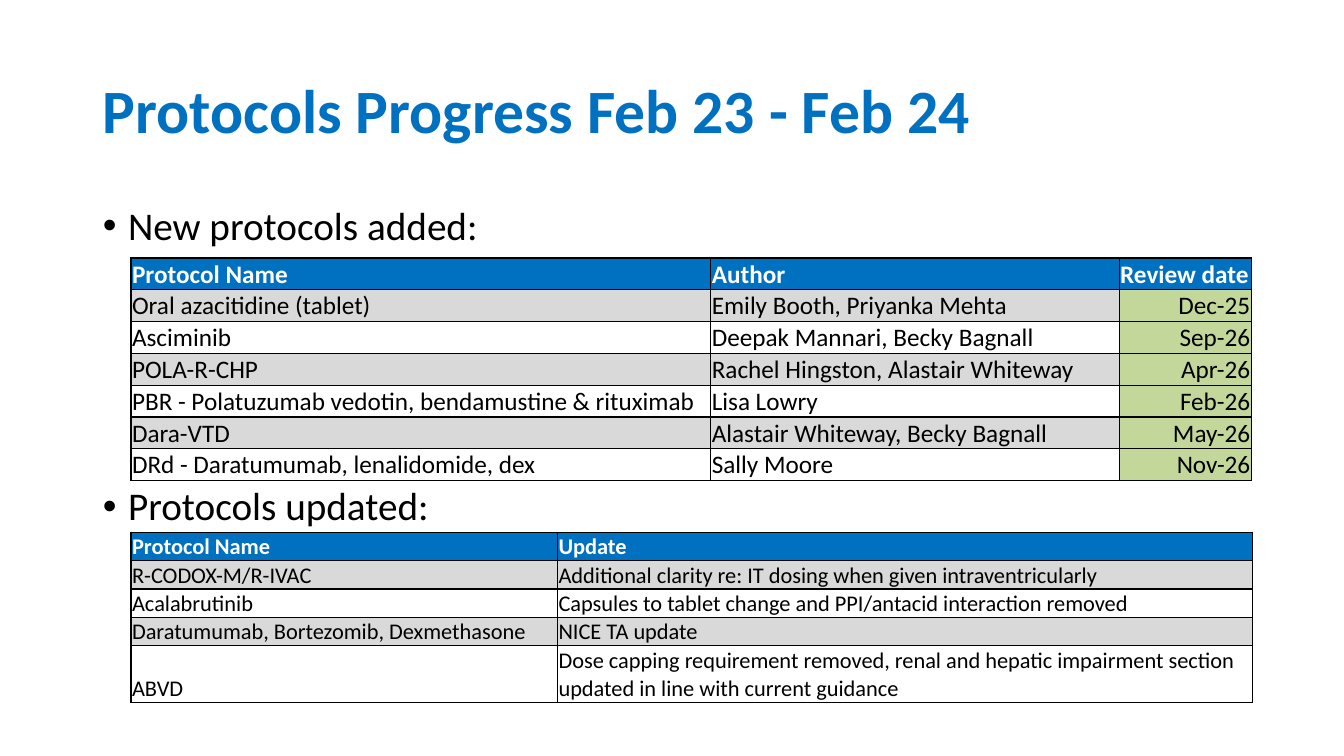
import pptx
import pptx.util
import pptx.dml.color
import pptx.enum.text
import pptx.oxml
import pptx.oxml.ns
from lxml import etree

Inches = pptx.util.Inches
Pt = pptx.util.Pt
RGBColor = pptx.dml.color.RGBColor
ALIGN = pptx.enum.text.PP_ALIGN
ANCHOR = pptx.enum.text.MSO_ANCHOR
qn = pptx.oxml.ns.qn

BLUE = RGBColor(0x00, 0x70, 0xC0)
GREY = RGBColor(0xD9, 0xD9, 0xD9)
GREEN = RGBColor(0xC4, 0xD7, 0x9B)
WHITE = RGBColor(0xFF, 0xFF, 0xFF)
BLACK = RGBColor(0x00, 0x00, 0x00)

ADDED = [
    ("Protocol Name", "Author", "Review date"),
    ("Oral azacitidine (tablet)", "Emily Booth, Priyanka Mehta", "Dec-25"),
    ("Asciminib", "Deepak Mannari, Becky Bagnall", "Sep-26"),
    ("POLA-R-CHP", "Rachel Hingston, Alastair Whiteway", "Apr-26"),
    ("PBR - Polatuzumab vedotin, bendamustine & rituximab", "Lisa Lowry", "Feb-26"),
    ("Dara-VTD", "Alastair Whiteway, Becky Bagnall", "May-26"),
    ("DRd - Daratumumab, lenalidomide, dex", "Sally Moore", "Nov-26"),
]
UPDATED = [
    ("Protocol Name", "Update"),
    ("R-CODOX-M/R-IVAC",
     "Additional clarity re: IT dosing when given intraventricularly"),
    ("Acalabrutinib",
     "Capsules to tablet change and PPI/antacid interaction removed"),
    ("Daratumumab, Bortezomib, Dexmethasone", "NICE TA update"),
    ("ABVD", "Dose capping requirement removed, renal and hepatic impairment "
             "section updated in line with current guidance"),
]


class Deck:
    font = "Calibri"

    def __init__(self, wide, high):
        self.file = pptx.Presentation()
        self.file.slide_width = Inches(wide)
        self.file.slide_height = Inches(high)
        self.slide = self.file.slides.add_slide(self.file.slide_layouts[1])

    def style(self, para, size, color, bold=False):
        for run in para.runs:
            run.font.name = self.font
            run.font.size = Pt(size)
            run.font.bold = bold
            run.font.color.rgb = color

    def place(self, shape, left, top, wide, high):
        shape.left, shape.top = Inches(left), Inches(top)
        shape.width, shape.height = Inches(wide), Inches(high)
        shape.text_frame.auto_size = pptx.enum.text.MSO_AUTO_SIZE.NONE

    def title(self, text, *box):
        shape = self.slide.shapes.title
        self.place(shape, *box)
        shape.text_frame.text = text
        shape.text_frame.vertical_anchor = ANCHOR.MIDDLE
        para = shape.text_frame.paragraphs[0]
        para.alignment = ALIGN.LEFT
        para.line_spacing = 0.9
        self.style(para, 44, BLUE, True)

    def bullets(self, items, *box):
        shape = self.slide.placeholders[1]
        self.place(shape, *box)
        frame = shape.text_frame
        frame.text = "\n".join(text for text, gap in items)
        for para, (text, gap) in zip(frame.paragraphs, items):
            para.line_spacing = 0.9
            para.space_before = Pt(gap)
            self.style(para, 28, BLACK)
            props = para._p.get_or_add_pPr()
            props.set("marL", str(Inches(0.25)))
            props.set("indent", str(-Inches(0.25)))
            etree.SubElement(props, qn("a:buFont"), typeface="Arial")
            etree.SubElement(props, qn("a:buChar"), char="•")

    def border(self, cell):
        props = cell._tc.get_or_add_tcPr()
        for spot, side in enumerate(("lnL", "lnR", "lnT", "lnB")):
            line = etree.Element(qn("a:" + side), w=str(Pt(1)))
            fill = etree.SubElement(line, qn("a:solidFill"))
            etree.SubElement(fill, qn("a:srgbClr"), val=str(BLACK))
            props.insert(spot, line)

    def cell(self, cell, text, size, fill, head, right):
        cell.text_frame.text = text
        cell.vertical_anchor = ANCHOR.BOTTOM
        cell.margin_left = cell.margin_right = cell.margin_top = Inches(0.01)
        cell.margin_bottom = 0
        para = cell.text_frame.paragraphs[0]
        para.alignment = ALIGN.RIGHT if right else ALIGN.LEFT
        self.style(para, size, WHITE if head else BLACK, head)
        cell.fill.solid()
        cell.fill.fore_color.rgb = fill
        self.border(cell)

    def table(self, data, left, top, cols, rows, size, date=None):
        frame = self.slide.shapes.add_table(
            len(data), len(cols), Inches(left), Inches(top),
            Inches(sum(cols)), Inches(sum(rows)))
        grid = frame.table
        for col, wide in zip(grid.columns, cols):
            col.width = Inches(wide)
        for i, (texts, high) in enumerate(zip(data, rows)):
            grid.rows[i].height = Inches(high)
            for j, text in enumerate(texts):
                head = i == 0
                dated = j == date and not head
                band = GREY if i % 2 else WHITE
                fill = BLUE if head else GREEN if dated else band
                self.cell(grid.cell(i, j), text, size, fill, head, dated)


def main():
    deck = Deck(13.33, 7.5)
    # Heading and list; the second item sits below the first table
    deck.title("Protocols Progress Feb 23 - Feb 24", 0.92, 0.4, 11.5, 1.45)
    deck.bullets([("New protocols added:", 10), ("Protocols updated:", 170)],
                 0.92, 2, 11.5, 4.76)
    # New protocols
    deck.table(ADDED, 1.3, 2.56, (5.75, 4.05, 1.31), [0.31] * 7, 18, date=2)
    # Updated protocols
    deck.table(UPDATED, 1.3, 5.28, (4.23, 6.89), [0.28] * 4 + [0.56], 16)
    deck.file.save("out.pptx")


if __name__ == "__main__":
    main()
